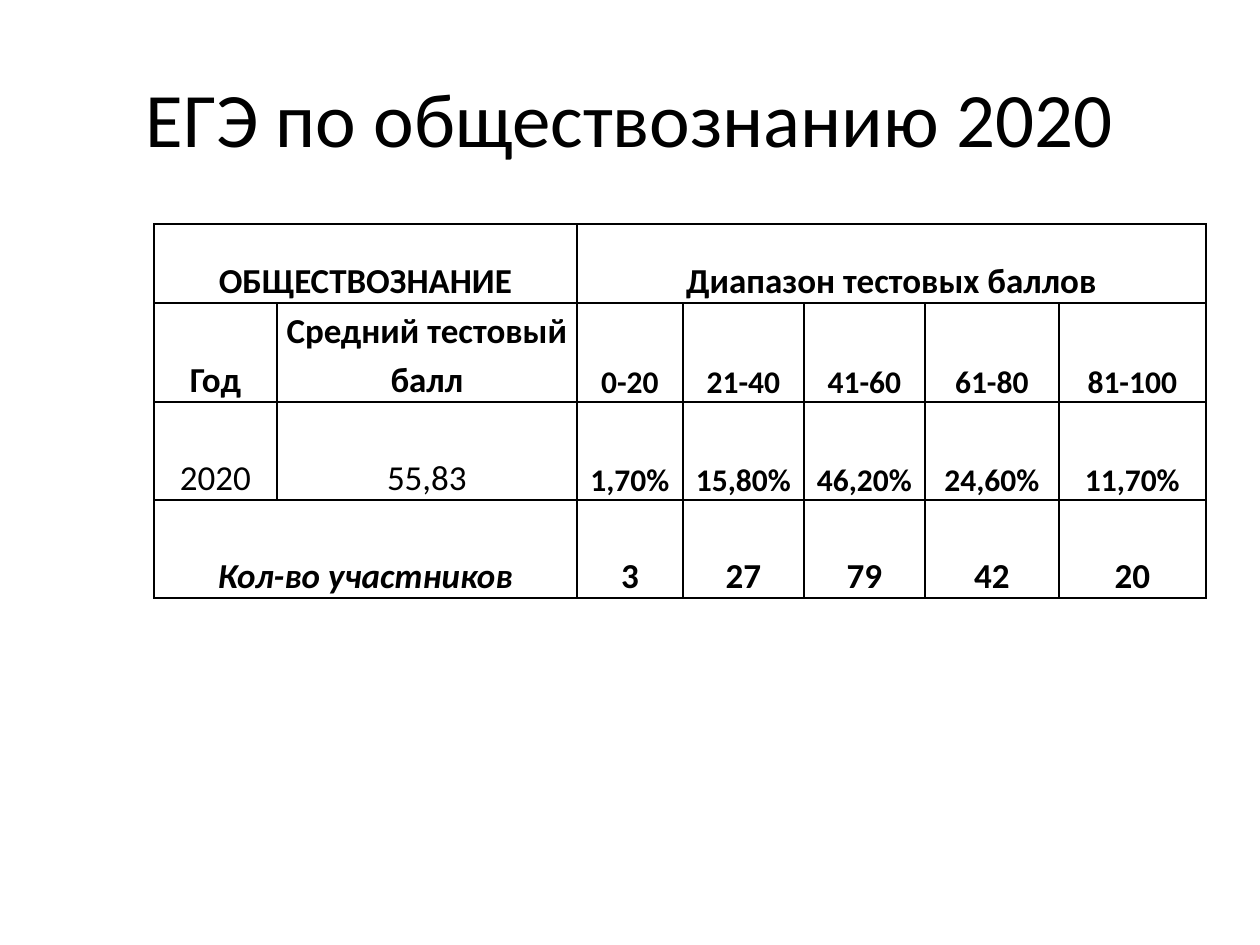
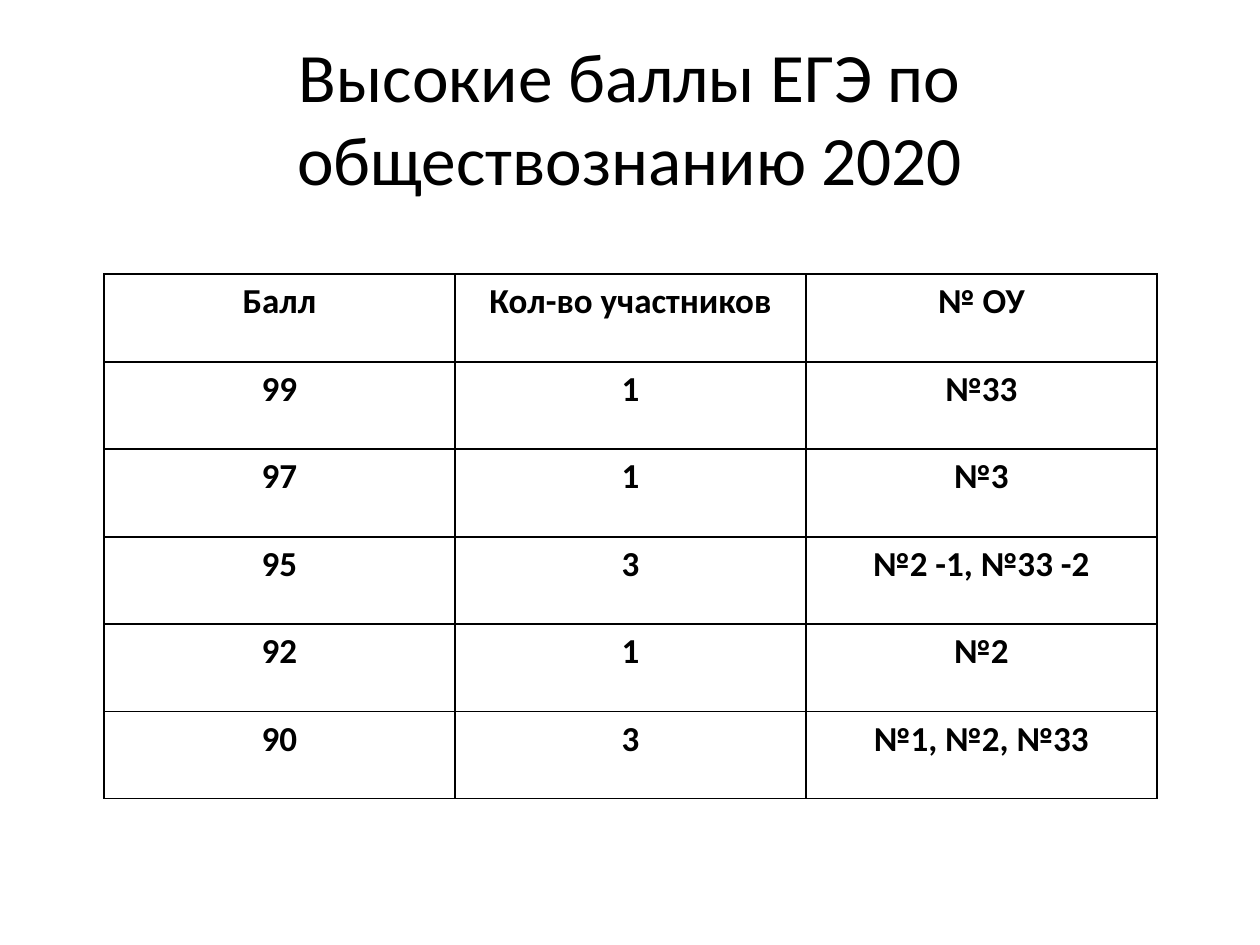
from dataclasses import dataclass

from lxml.etree import SubElement
from pptx import Presentation
from pptx.dml.color import RGBColor
from pptx.enum.text import MSO_ANCHOR, PP_ALIGN
from pptx.oxml.ns import qn
from pptx.util import Emu, Pt

PX_PER_INCH = 126


@dataclass(frozen=True)
class Theme:
    font: str = "Calibri"
    ink: str = "000000"
    paper: str = "FFFFFF"
    title: float = 44
    long_title: float = 39.6
    cell: float = 20
    small_cell: float = 18
    line_spacing: float = 1.15
    border: float = 1
    cell_margin: int = 9


THEME = Theme()


def px(n):
    return Emu(round(n * 914400 / PX_PER_INCH))


def add_run(p, text, size, bold=False, italic=False):
    r = p.add_run()
    r.text = text
    r.font.name = THEME.font
    r.font.size = Pt(size)
    r.font.bold = bold
    r.font.italic = italic
    r.font.color.rgb = RGBColor.from_string(THEME.ink)


def add_slide(prs, title, size):
    s = prs.slides.add_slide(prs.slide_layouts[6])
    s.background.fill.solid()
    s.background.fill.fore_color.rgb = RGBColor.from_string(THEME.paper)
    sp = s.shapes.add_textbox(px(63), px(38), px(1134), px(157))
    tf = sp.text_frame
    tf.word_wrap = True
    tf.vertical_anchor = MSO_ANCHOR.MIDDLE
    p = tf.paragraphs[0]
    p.alignment = PP_ALIGN.CENTER
    add_run(p, title, size)
    return s


def set_borders(cell):
    tc_pr = cell._tc.get_or_add_tcPr()
    for side in ("L", "R", "T", "B"):
        ln = SubElement(tc_pr, qn(f"a:ln{side}"), w=str(Pt(THEME.border)))
        fill = SubElement(ln, qn("a:solidFill"))
        SubElement(fill, qn("a:srgbClr"), val=THEME.ink)


def add_grid(s, left, top, widths, heights, anchor):
    frame = s.shapes.add_table(len(heights), len(widths), px(left), px(top),
                               px(sum(widths)), px(sum(heights)))
    table = frame.table
    table.first_row = False
    table.horz_banding = False
    for column, width in zip(table.columns, widths):
        column.width = px(width)
    for row, height in zip(table.rows, heights):
        row.height = px(height)
    for cell in table.iter_cells():
        set_borders(cell)
        cell.fill.background()
        cell.margin_left = cell.margin_right = px(THEME.cell_margin)
        cell.margin_top = cell.margin_bottom = 0
        cell.vertical_anchor = anchor
    return table


def write_cell(cell, text, size=THEME.cell, bold=True, italic=False):
    p = cell.text_frame.paragraphs[0]
    p.alignment = PP_ALIGN.CENTER
    p.line_spacing = THEME.line_spacing
    add_run(p, text, size, bold, italic)


def write_row(table, row, texts, first=0, **style):
    for col, text in enumerate(texts, first):
        write_cell(table.cell(row, col), text, **style)


def merge_across(table, row, first, last):
    table.cell(row, first).merge(table.cell(row, last))


def add_score_ranges(prs):
    s = add_slide(prs, "ЕГЭ по обществознанию 2020", THEME.title)
    table = add_grid(s, 154, 224, [123, 300, 106, 121, 121, 134, 147],
                     [79, 99, 98, 98], MSO_ANCHOR.BOTTOM)
    for row, first, last in ((0, 0, 1), (0, 2, 6), (3, 0, 1)):
        merge_across(table, row, first, last)
    write_cell(table.cell(0, 0), "ОБЩЕСТВОЗНАНИЕ")
    write_cell(table.cell(0, 2), "Диапазон тестовых баллов")
    write_row(table, 1, ["Год", "Средний тестовый балл"])
    write_row(table, 1, ["0-20", "21-40", "41-60", "61-80", "81-100"],
              first=2, size=THEME.small_cell)
    write_row(table, 2, ["2020", "55,83"], bold=False)
    write_row(table, 2, ["1,70%", "15,80%", "46,20%", "24,60%", "11,70%"],
              first=2, size=THEME.small_cell)
    write_cell(table.cell(3, 0), "Кол-во участников", italic=True)
    write_row(table, 3, ["3", "27", "79", "42", "20"], first=2)


def add_high_scores(prs):
    s = add_slide(prs, "Высокие баллы ЕГЭ по обществознанию 2020", THEME.long_title)
    rows = [
        ("Балл", "Кол-во участников", "№ ОУ"),
        ("99", "1", "№33"),
        ("97", "1", "№3"),
        ("95", "3", "№2 -1, №33 -2"),
        ("92", "1", "№2"),
        ("90", "3", "№1, №2, №33"),
    ]
    heights = [88, 87] * (len(rows) // 2)
    table = add_grid(s, 104, 274, [351] * 3, heights, MSO_ANCHOR.TOP)
    for row, texts in enumerate(rows):
        write_row(table, row, texts)


def main():
    prs = Presentation()
    prs.slide_width = px(1260)
    prs.slide_height = px(945)
    add_score_ranges(prs)
    add_high_scores(prs)
    prs.save("out.pptx")


if __name__ == "__main__":
    main()
